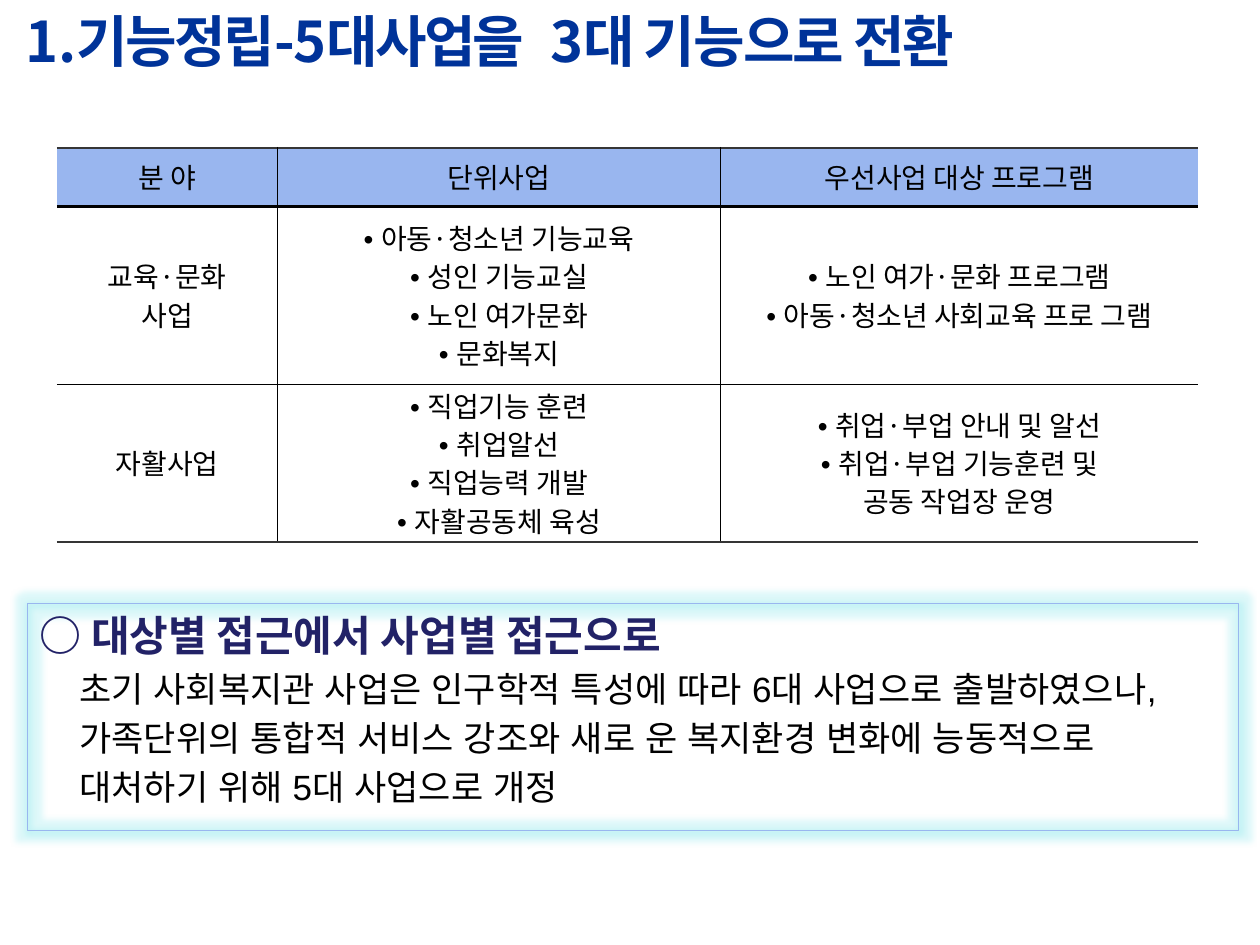
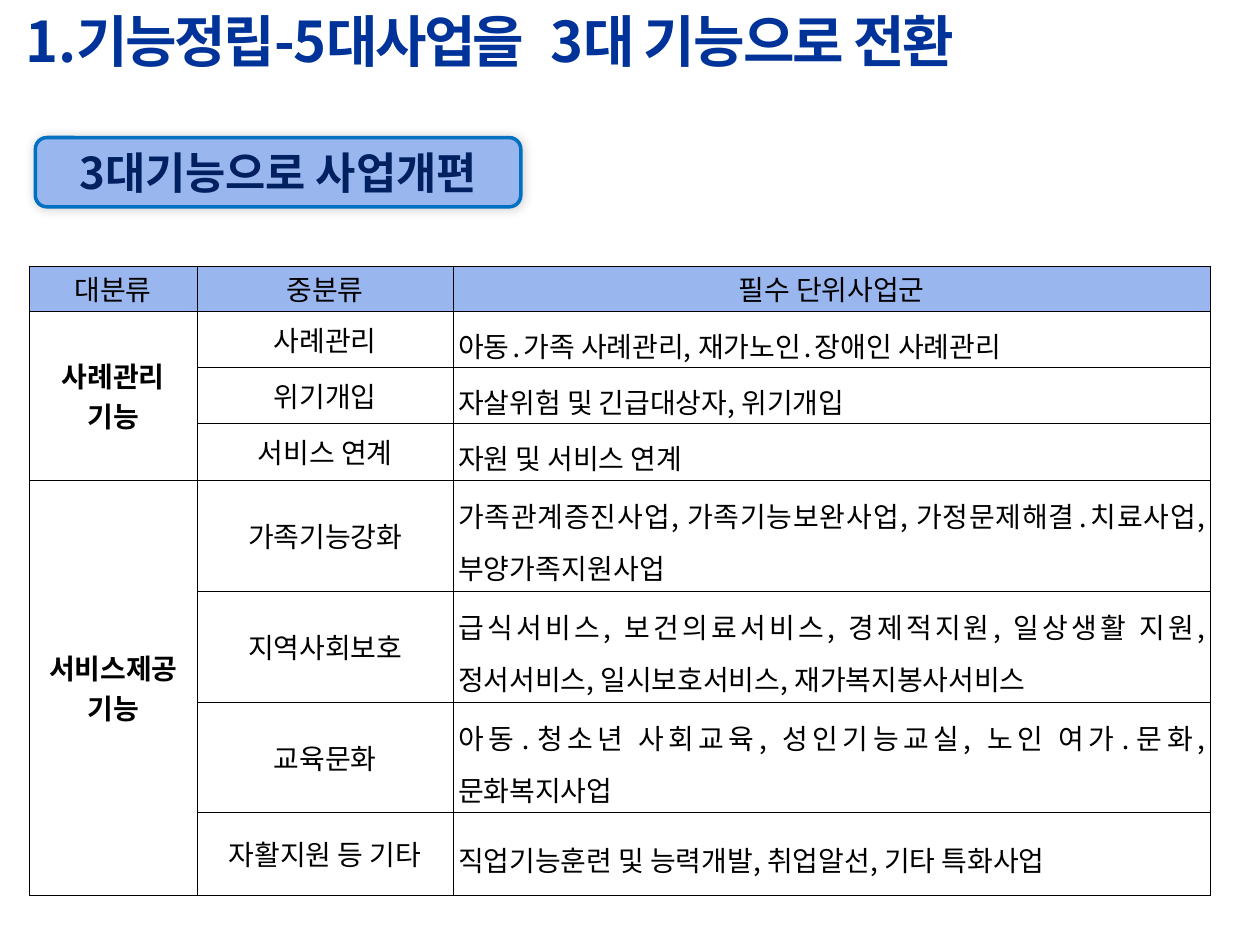
from pptx import Presentation
from pptx.dml.color import RGBColor
from pptx.enum import shapes, text
from pptx.oxml import parse_xml
from pptx.oxml import ns
from pptx.util import Pt

KOREAN, LATIN = "Noto Sans CJK KR", "Arial"
BLACK, NAVY, BAND = "000000", "003399", "99B6EF"
BULLET = "• "
CENTER, JUSTIFY = text.PP_ALIGN.CENTER, text.PP_ALIGN.JUSTIFY
MIDDLE = text.MSO_ANCHOR.MIDDLE
A = ns.nsdecls("a")
HAIR = (BLACK, 0.28)
EDGE = ("353535", 1.41)
HEAVY = (BLACK, 1.98)
OPEN = None


def style(p, size, color=BLACK, bold=False, font=KOREAN):
    for r in p.runs:
        name = LATIN if r.text == BULLET else font
        r.font.size = Pt(size)
        r.font.bold = bold
        r.font.name = name
        r.font.color.rgb = RGBColor.from_string(color)
        r._r.get_or_add_rPr().append(parse_xml(f'<a:ea {A} typeface="{name}"/>'))


def add_grid(s, left, top, widths, heights, rows, across, down, pad, spacing):
    frame = s.shapes.add_table(len(rows), len(widths), Pt(left), Pt(top),
                               Pt(sum(widths)), Pt(sum(heights)))
    table = frame.table
    table.first_row = table.horz_banding = False
    for column, width in zip(table.columns, widths):
        column.width = Pt(width)
    for i, row in enumerate(rows):
        table.rows[i].height = Pt(heights[i])
        for j, words in enumerate(row):
            cell = table.cell(i, j)
            cell.text_frame.text = words
            cell.vertical_anchor = MIDDLE
            cell.margin_left = cell.margin_right = Pt(pad[0])
            cell.margin_top = cell.margin_bottom = Pt(pad[1])
            if i == 0:
                cell.fill.solid()
                cell.fill.fore_color.rgb = RGBColor.from_string(BAND)
            else:
                cell.fill.background()
            for p in cell.text_frame.paragraphs:
                p.alignment = CENTER
                p.line_spacing = spacing
                if p.text.startswith(BULLET):
                    r = p.runs[0]
                    r.text = r.text[len(BULLET):]
                    mark = p.add_run()
                    mark.text = BULLET
                    r._r.addprevious(mark._r)
                style(p, 16)
            sides = zip("LRTB", (down[j], down[j + 1], across[i], across[i + 1]))
            for n, (side, line) in enumerate(sides):
                if line is OPEN:
                    xml = f'<a:ln{side} {A}><a:noFill/></a:ln{side}>'
                else:
                    xml = (f'<a:ln{side} {A} w="{Pt(line[1])}"><a:solidFill>'
                           f'<a:srgbClr val="{line[0]}"/></a:solidFill></a:ln{side}>')
                cell._tc.get_or_add_tcPr().insert(n, parse_xml(xml))
    return table


prs = Presentation()
prs.slide_width, prs.slide_height = Pt(720), Pt(540)

for _ in range(2):
    s = prs.slides.add_slide(prs.slide_layouts[6])
    tf = s.shapes.add_textbox(0, 0, Pt(683), Pt(46)).text_frame
    tf.word_wrap = True
    tf.margin_left = Pt(14.4)
    p = tf.paragraphs[0]
    for words, tracking in (("1.", 0), ("기능정립-5대사업을", -150), (" ", 730),
                            ("3대 기능으로 전환", -110)):
        r = p.add_run()
        r.text = words
        r._r.get_or_add_rPr().set("spc", str(tracking))
    style(p, 32, NAVY, True)

overview, reform = prs.slides

add_grid(
    overview, 32.5, 84.5, [126, 253.3, 272.9], [33.6, 101.4, 90],
    [["분 야", "단위사업", "우선사업 대상 프로그램"],
     ["교육·문화\n사업",
      "• 아동·청소년 기능교육\n• 성인 기능교실\n• 노인 여가문화\n• 문화복지",
      "• 노인 여가·문화 프로그램\n• 아동·청소년 사회교육 프로 그램"],
     ["자활사업",
      "• 직업기능 훈련\n• 취업알선\n• 직업능력 개발\n• 자활공동체 육성",
      "• 취업·부업 안내 및 알선\n• 취업·부업 기능훈련 및\n공동 작업장 운영"]],
    [EDGE, HEAVY, HAIR, EDGE], [OPEN, HAIR, HAIR, OPEN], (4.3, 1.4), 0.95)

note = overview.shapes.add_shape(shapes.MSO_SHAPE.RECTANGLE,
                                 Pt(15.6), Pt(345), Pt(692), Pt(129.6))
note.fill.background()
note.line.color.rgb = RGBColor.from_string(BAND)
note.line.width = Pt(0.75)
tf = note.text_frame
tf.word_wrap = True
tf.vertical_anchor = text.MSO_ANCHOR.TOP
tf.text = ("○ 대상별 접근에서 사업별 접근으로\n"
           "초기 사회복지관 사업은 인구학적 특성에 따라 6대 사업으로 출발하였으나,\n"
           "가족단위의 통합적 서비스 강조와 새로 운 복지환경 변화에 능동적으로\n"
           "대처하기 위해 5대 사업으로 개정")
for i, p in enumerate(tf.paragraphs):
    p.alignment = text.PP_ALIGN.LEFT
    if i == 0:
        style(p, 24, "222267", True)
    else:
        p._p.get_or_add_pPr().set("marL", str(Pt(22.6)))
        p.space_before = Pt(4)
        style(p, 20, font=LATIN)

badge = reform.shapes.add_shape(shapes.MSO_SHAPE.ROUNDED_RECTANGLE,
                                Pt(20.2), Pt(78.6), Pt(277.4), Pt(39.6))
badge.fill.solid()
badge.fill.fore_color.rgb = RGBColor.from_string(BAND)
badge.line.color.rgb = RGBColor.from_string("0070C0")
badge.line.width = Pt(2)
tf = badge.text_frame
tf.text = "3대기능으로 사업개편"
tf.vertical_anchor = MIDDLE
tf.paragraphs[0].alignment = CENTER
style(tf.paragraphs[0], 25, "002060", True)

rows = [
    ["대분류", "중분류", "필수 단위사업군"],
    ["사례관리\n기능", "사례관리", "아동․가족 사례관리, 재가노인․장애인 사례관리"],
    ["", "위기개입", "자살위험 및 긴급대상자, 위기개입"],
    ["", "서비스 연계", "자원 및 서비스 연계"],
    ["서비스제공 기능", "가족기능강화",
     "가족관계증진사업, 가족기능보완사업, 가정문제해결․치료사업, 부양가족지원사업"],
    ["", "지역사회보호",
     "급식서비스, 보건의료서비스, 경제적지원, 일상생활 지원, 정서서비스, "
     "일시보호서비스, 재가복지봉사서비스"],
    ["", "교육문화", "아동․청소년 사회교육, 성인기능교실, 노인 여가․문화, 문화복지사업"],
    ["", "자활지원 등 기타", "직업기능훈련 및 능력개발, 취업알선, 기타 특화사업"],
]
table = add_grid(reform, 16.7, 152, [96, 146.2, 432.8],
                 [25.7, 32, 32, 32.6, 63.4, 63.4, 63.4, 47], rows,
                 [HAIR] * 9, [HAIR] * 4, (2.9, 0.7), 1)
for i in range(1, len(rows)):
    p = table.cell(i, 2).text_frame.paragraphs[0]
    p.alignment = JUSTIFY
    p.line_spacing = 1.3
    p._p.get_or_add_pPr().set("hangingPunct", "0")
family = table.cell(4, 2).text_frame.paragraphs[0].runs[0]
family._r.get_or_add_rPr().set("spc", "20")
for first, last in ((1, 3), (4, 7)):
    group = table.cell(first, 0)
    group.merge(table.cell(last, 0))
    for p in group.text_frame.paragraphs:
        for r in p.runs:
            r.font.bold = True

for sp, kind, size, color, alpha in (
        (note, "glow", f'rad="{Pt(5)}"', "66E0E8", 22),
        (badge, "outerShdw", f'blurRad="{Pt(6)}" dist="0" dir="18900000"', BLACK, 20)):
    sp.shadow.inherit = False
    sp._element.spPr.find(ns.qn("a:effectLst")).append(parse_xml(
        f'<a:{kind} {A} {size}><a:srgbClr val="{color}">'
        f'<a:alpha val="{alpha * 1000}"/></a:srgbClr></a:{kind}>'))

prs.save("out.pptx")
